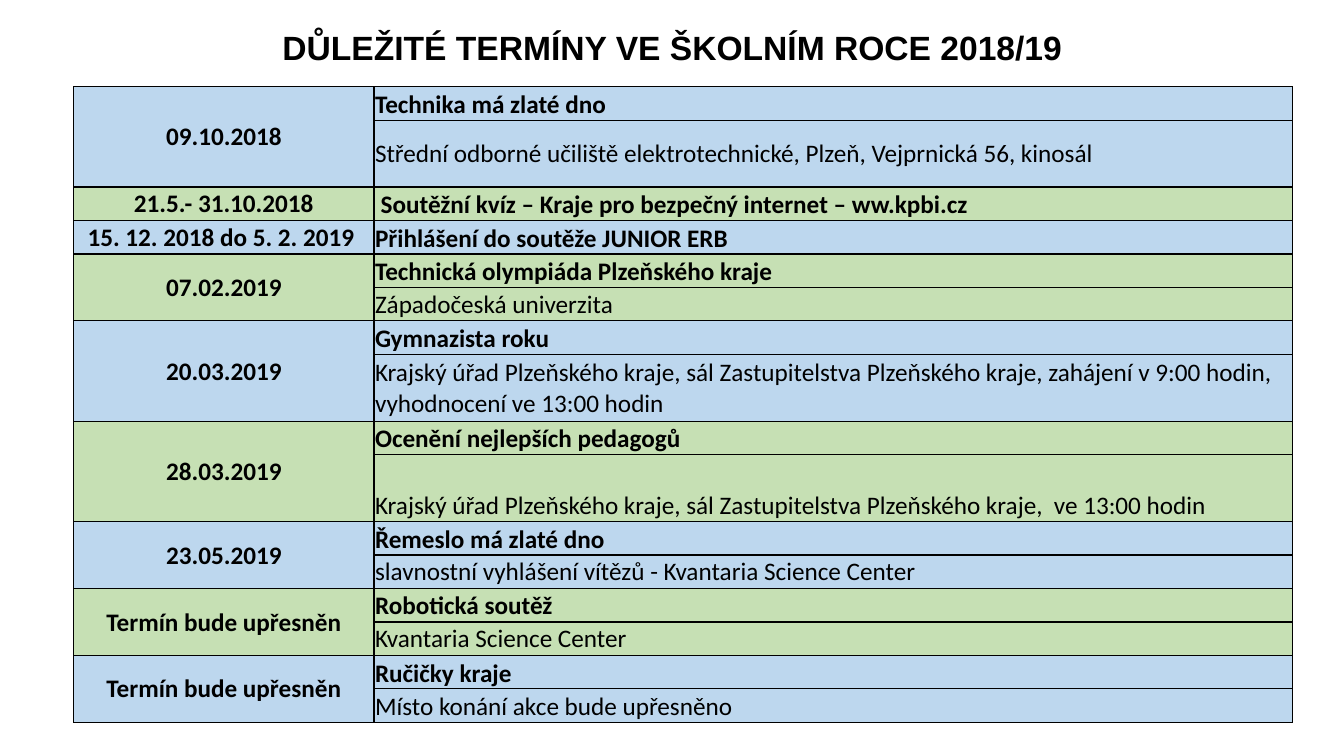
from lxml.etree import fromstring
from pptx import Presentation
from pptx.dml.color import RGBColor
from pptx.enum.text import MSO_ANCHOR, MSO_AUTO_SIZE, PP_ALIGN
from pptx.oxml.ns import nsdecls
from pptx.util import Pt

BLACK, BLUE, GREEN = "000000", "BDD7EE", "C6E0B4"
MID, LOW = MSO_ANCHOR.MIDDLE, MSO_ANCHOR.BOTTOM
UNIT = 23.9


def paint(fmt, color):
    if hasattr(fmt, "solid"):
        fmt.solid()
        fmt.fore_color.rgb = RGBColor.from_string(color)
    else:
        fmt.color.rgb = RGBColor.from_string(color)


def write(frame, text, font, size, bold, align):
    frame.text = text
    par = frame.paragraphs[0]
    par.alignment = align
    run = par.runs[0].font
    run.name, run.size, run.bold = font, Pt(size), bold
    paint(run, BLACK)


# Events: date, then lines of (text, bold, anchor, height in units)
events = [
    ("09.10.2018", [
        ("Technika má zlaté dno", True, LOW, 1),
        ("Střední odborné učiliště elektrotechnické, Plzeň, Vejprnická 56, kinosál", False, MID, 2)]),
    ("21.5.- 31.10.2018", [
        (" Soutěžní kvíz – Kraje pro bezpečný internet – ww.kpbi.cz", True, LOW, 1)]),
    ("15. 12. 2018 do 5. 2. 2019 ", [
        ("Přihlášení do soutěže JUNIOR ERB", True, LOW, 1)]),
    ("07.02.2019", [
        ("Technická olympiáda Plzeňského kraje", True, LOW, 1),
        ("Západočeská univerzita", False, MID, 1)]),
    ("20.03.2019", [
        ("Gymnazista roku", True, LOW, 1),
        ("Krajský úřad Plzeňského kraje, sál Zastupitelstva Plzeňského kraje, "
         "zahájení v 9:00 hodin, vyhodnocení ve 13:00 hodin", False, MID, 2)]),
    ("28.03.2019", [
        ("Ocenění nejlepších pedagogů", True, LOW, 1),
        ("Krajský úřad Plzeňského kraje, sál Zastupitelstva Plzeňského kraje,  ve 13:00 hodin",
         False, LOW, 2)]),
    ("23.05.2019", [
        ("Řemeslo má zlaté dno", True, LOW, 1),
        ("slavnostní vyhlášení vítězů - Kvantaria Science Center", False, MID, 1)]),
    ("Termín bude upřesněn", [
        ("Robotická soutěž", True, MID, 1),
        ("Kvantaria Science Center", False, MID, 1)]),
    ("Termín bude upřesněn", [
        ("Ručičky kraje", True, LOW, 1),
        ("Místo konání akce bude upřesněno", False, LOW, 1)]),
]

deck = Presentation()
deck.slide_width, deck.slide_height = Pt(960), Pt(540)
slide = deck.slides.add_slide(deck.slide_layouts[6])

# Table frame
count = sum(len(lines) for _, lines in events)
units = sum(line[3] for _, lines in events for line in lines)
table = slide.shapes.add_table(count, 2, Pt(52.6), Pt(61.9), Pt(870.5), Pt(units * UNIT)).table
table.first_row = table.horz_banding = False
table.columns[0].width, table.columns[1].width = Pt(214.6), Pt(655.9)

# Text and fills, colours alternating by event
top = 0
for num, (date, lines) in enumerate(events):
    color = GREEN if num % 2 else BLUE
    first = table.cell(top, 0)
    if len(lines) > 1:
        first.merge(table.cell(top + len(lines) - 1, 0))
    write(first.text_frame, date, "Calibri", 18, True, PP_ALIGN.CENTER)
    for row, (text, bold, anchor, high) in enumerate(lines, top):
        table.rows[row].height = Pt(high * UNIT)
        left, right = table.cell(row, 0), table.cell(row, 1)
        write(right.text_frame, text, "Calibri", 18, bold, PP_ALIGN.LEFT)
        left.vertical_anchor, right.vertical_anchor = MID, anchor
        paint(left.fill, color)
        paint(right.fill, color)
    top += len(lines)

# Margins and borders
for cell in table.iter_cells():
    cell.margin_left = cell.margin_right = cell.margin_top = Pt(0.7)
    cell.margin_bottom = 0
    props = cell._tc.get_or_add_tcPr()
    for spot, side in enumerate(("lnL", "lnR", "lnT", "lnB")):
        props.insert(spot, fromstring(
            f'<a:{side} {nsdecls("a")} w="{Pt(1)}"><a:solidFill>'
            f'<a:srgbClr val="{BLACK}"/></a:solidFill></a:{side}>'))

# Title
title = slide.shapes.add_textbox(Pt(176.4), Pt(15.8), Pt(607.7), Pt(36)).text_frame
title.word_wrap = True
title.auto_size = MSO_AUTO_SIZE.SHAPE_TO_FIT_TEXT
write(title, "DŮLEŽITÉ TERMÍNY VE ŠKOLNÍM ROCE 2018/19", "Arial", 24, True, PP_ALIGN.CENTER)

deck.save("out.pptx")
